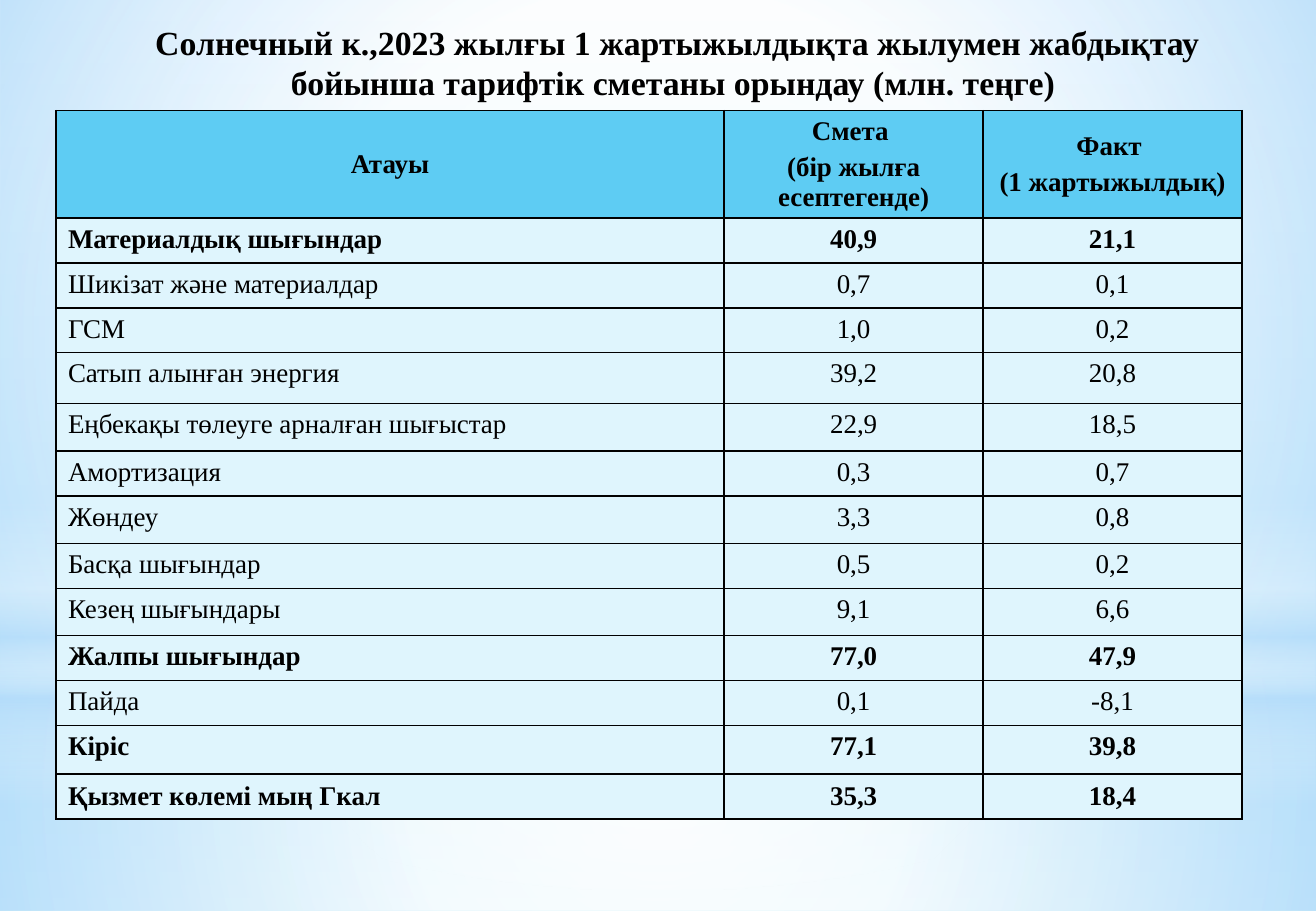
"""Build a one-slide heat supply tariff estimate report."""
from lxml.etree import SubElement
from pptx import Presentation
from pptx.dml.color import RGBColor
from pptx.enum.shapes import MSO_SHAPE
from pptx.enum.text import MSO_ANCHOR, PP_ALIGN
from pptx.oxml import parse_xml
from pptx.oxml.ns import nsdecls, qn
from pptx.util import Inches, Pt

FONT = "Times New Roman"
BLACK, HEADER_FILL, BODY_FILL = "000000", "5ECCF3", "DFF5FD"
WIDTH, HEIGHT = 10.83, 7.5

TITLE = ("Солнечный к.,2023 жылғы 1 жартыжылдықта жылумен жабдықтау "
         "бойынша тарифтік сметаны орындау (млн. теңге) ")
HEADER = ("Атауы", "Смета \n(бір жылға есептегенде)", "Факт \n(1 жартыжылдық)")
ROWS = [
    ("Материалдық шығындар", "40,9", "21,1", 0.37),
    ("Шикізат және материалдар", "0,7", "0,1", 0.37),
    ("ГСМ", "1,0", "0,2", 0.37),
    ("Сатып алынған энергия", "39,2", "20,8", 0.42),
    ("Еңбекақы төлеуге арналған шығыстар", "22,9", "18,5", 0.39),
    ("Амортизация", "0,3", "0,7", 0.37),
    ("Жөндеу", "3,3", "0,8", 0.39),
    ("Басқа шығындар", "0,5", "0,2", 0.37),
    ("Кезең шығындары", "9,1", "6,6", 0.39),
    ("Жалпы шығындар", "77,0", "47,9", 0.37),
    ("Пайда", "0,1", "-8,1", 0.37),
    ("Кіріс", "77,1", "39,8", 0.4),
    ("Қызмет көлемі мың Гкал", "35,3", "18,4", 0.37),
]
BOLD_ROWS = {"Материалдық шығындар", "Жалпы шығындар", "Кіріс", "Қызмет көлемі мың Гкал"}
COLUMNS = (5.5, 2.13, 2.13)
HEADER_HEIGHT = 0.88

BACKGROUND = [(0, "F7FCFE", 100), (74, "B7E8FA", 100), (83, "B7E8FA", 100), (100, "CFF0FB", 100)]
LAYERS = [
    (MSO_SHAPE.RECTANGLE, 5.58, 1.92, None,
     [(0, "FFFFFF", 91), (37, "FFFFFF", 76), (100, "B4DCFA", 79)]),
    (MSO_SHAPE.RECTANGLE, 0, 5.58, None,
     [(0, "FFFFFF", 89), (48, "FFFFFF", 62), (100, "B4DCFA", 79)]),
    (MSO_SHAPE.RECTANGLE, 4.12, 2.5, 90,
     [(0, "FFFFFF", 0), (29, "FFFFFF", 30), (45, "B4DCFA", 40),
      (55, "FFFFFF", 26), (65, "B4DCFA", 60), (100, "FFFFFF", 0)]),
    (MSO_SHAPE.OVAL, 1.75, 5.58, None, [(0, "FFFFFF", 100), (56, "FFFFFF", 0)]),
]


def color(value):
    return RGBColor.from_string(value)


def set_gradient(owner, fill, stops, angle):
    fill.gradient()
    gradient = owner.element.find(".//" + qn("a:gradFill"))
    for child in list(gradient):
        gradient.remove(child)
    stop_list = SubElement(gradient, qn("a:gsLst"))
    for position, value, opacity in stops:
        stop = SubElement(stop_list, qn("a:gs"), pos=str(position * 1000))
        tint = SubElement(stop, qn("a:srgbClr"), val=value)
        if opacity < 100:
            SubElement(tint, qn("a:alpha"), val=str(opacity * 1000))
    if angle is None:
        circle = SubElement(gradient, qn("a:path"), path="circle")
        SubElement(circle, qn("a:fillToRect"), l="50000", t="50000", r="50000", b="50000")
    else:
        SubElement(gradient, qn("a:lin"), ang=str(angle * 60000), scaled="0")


def write(frame, text, size, bold, align):
    frame.text = text
    for index, para in enumerate(frame.paragraphs):
        para.alignment = align
        if index:
            para.space_before = Pt(size * 0.2)
        font = para.font
        font.name, font.size, font.bold = FONT, Pt(size), bold
        font.color.rgb = color(BLACK)


def style_cell(cell, fill, anchor, side, edge):
    cell.fill.solid()
    cell.fill.fore_color.rgb = color(fill)
    cell.vertical_anchor = anchor
    cell.margin_left = cell.margin_right = Inches(side)
    cell.margin_top = cell.margin_bottom = Inches(edge)
    properties = cell._tc.get_or_add_tcPr()
    for index, name in enumerate(("lnL", "lnR", "lnT", "lnB")):
        properties.insert(index, parse_xml(
            f'<a:{name} {nsdecls("a")} w="12700"><a:solidFill>'
            f'<a:srgbClr val="{BLACK}"/></a:solidFill></a:{name}>'))


def add_backdrop(page):
    set_gradient(page, page.background.fill, BACKGROUND, 90)
    for kind, top, height, angle, stops in LAYERS:
        layer = page.shapes.add_shape(kind, 0, Inches(top), Inches(WIDTH), Inches(height))
        layer.shadow.inherit = False
        layer.line.fill.background()
        set_gradient(layer, layer.fill, stops, angle)


def add_estimate(page):
    heights = [HEADER_HEIGHT] + [row[-1] for row in ROWS]
    table = page.shapes.add_table(
        len(heights), len(COLUMNS), Inches(0.46), Inches(0.91),
        Inches(sum(COLUMNS)), Inches(sum(heights))).table
    table.first_row = table.horz_banding = False
    for column, width in zip(table.columns, COLUMNS):
        column.width = Inches(width)
    for row, height in zip(table.rows, heights):
        row.height = Inches(height)
    for index, text in enumerate(HEADER):
        cell = table.cell(0, index)
        write(cell.text_frame, text, 16, True, PP_ALIGN.CENTER)
        side, edge = (0.11, 0.05) if index else (0.06, 0.03)
        style_cell(cell, HEADER_FILL, MSO_ANCHOR.MIDDLE, side, edge)
    for number, row in enumerate(ROWS, 1):
        anchor = MSO_ANCHOR.MIDDLE if number == len(ROWS) else MSO_ANCHOR.TOP
        for index, text in enumerate(row[:-1]):
            cell = table.cell(number, index)
            align = PP_ALIGN.CENTER if index else PP_ALIGN.LEFT
            write(cell.text_frame, text, 16, row[0] in BOLD_ROWS, align)
            style_cell(cell, BODY_FILL, anchor, 0.1, 0.05)


def add_title(page):
    box = page.shapes.add_textbox(Inches(0.93), Inches(0.13), Inches(9.29), Inches(0.77))
    box.text_frame.word_wrap = True
    write(box.text_frame, TITLE, 20, True, PP_ALIGN.CENTER)


def main():
    deck = Presentation()
    deck.slide_width, deck.slide_height = Inches(WIDTH), Inches(HEIGHT)
    page = deck.slides.add_slide(deck.slide_layouts[6])
    add_backdrop(page)
    add_estimate(page)
    add_title(page)
    deck.save("out.pptx")


if __name__ == "__main__":
    main()
